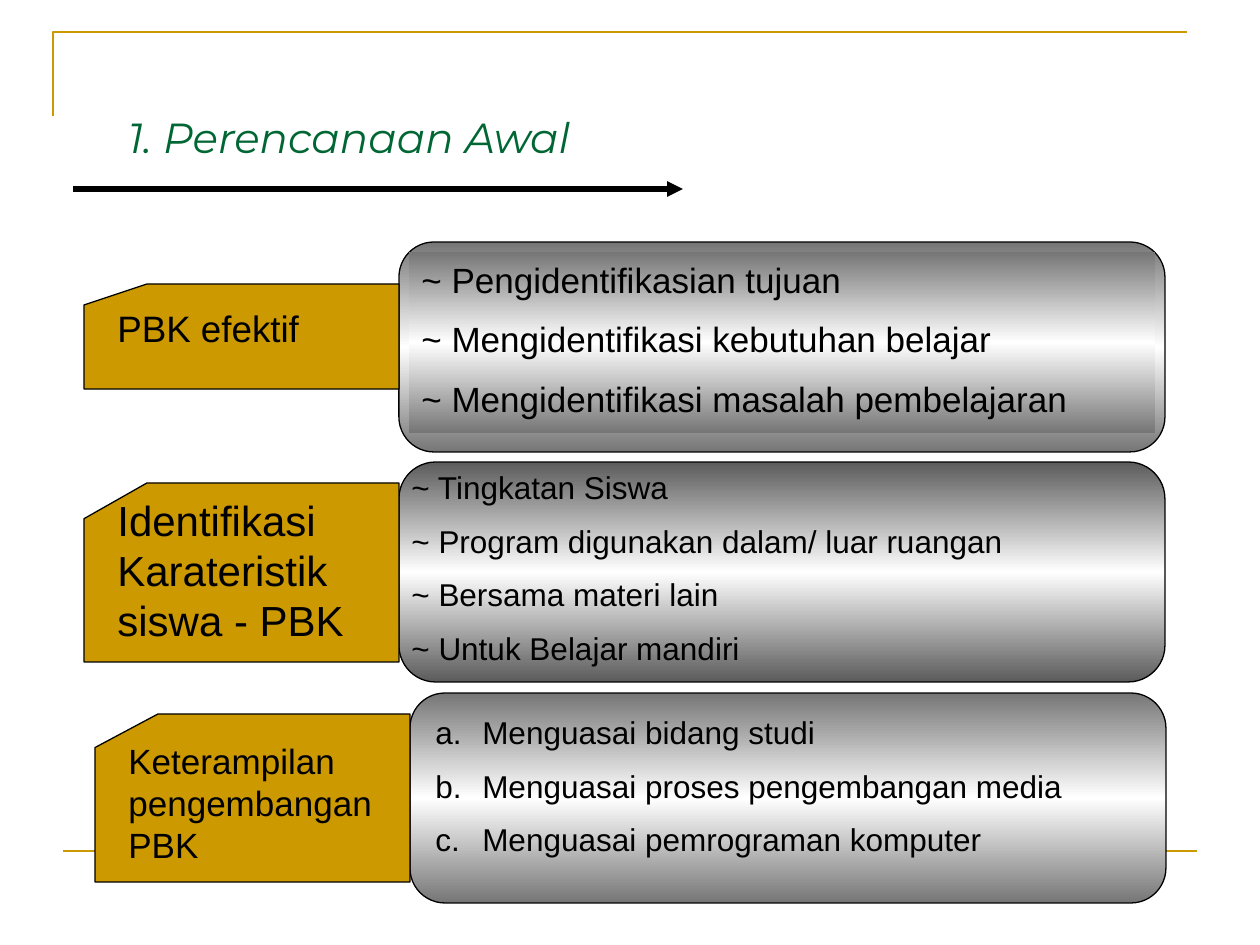
from copy import deepcopy
from dataclasses import dataclass

from lxml import etree
from pptx import Presentation
from pptx import util as u
from pptx.dml.color import RGBColor
from pptx.enum import shapes, text
from pptx.oxml.ns import qn

SCALE = 914400 / 126  # EMU per px


def px(length):
    return u.Emu(round(length * SCALE))


@dataclass(frozen=True)
class Theme:
    gold: str = "CC9900"
    green: str = "006633"
    black: str = "000000"
    white: str = "FFFFFF"
    gray: str = "767676"
    dark_gray: str = "5B5B5B"
    body_font: str = "Arial"
    title_font: str = "Montserrat"
    title: int = 24
    large: int = 24
    medium: int = 20
    small: int = 18
    label: int = 21


THEME = Theme()


def write_text(frame, lines, size, color=THEME.black, font=THEME.body_font,
               italic=False, align=text.PP_ALIGN.LEFT, wrap=True, lettered=False):
    """Fill a text frame with one paragraph per line."""
    frame.word_wrap = wrap
    frame.auto_size = text.MSO_AUTO_SIZE.NONE
    frame.vertical_anchor = text.MSO_ANCHOR.TOP
    for index, line in enumerate(lines):
        paragraph = frame.add_paragraph() if index else frame.paragraphs[0]
        paragraph.alignment = align
        paragraph.space_before = u.Pt(size / 2 if index else 0)
        run = paragraph.add_run()
        run.text = line
        run.font.name = font
        run.font.size = u.Pt(size)
        run.font.italic = italic
        run.font.color.rgb = RGBColor.from_string(color)
        if lettered:
            properties = paragraph._p.get_or_add_pPr()
            indent = px(47)
            properties.set("marL", str(indent))
            properties.set("indent", str(-indent))
            etree.SubElement(properties, qn("a:buAutoNum"), type="alphaLcPeriod")


class SlideBuilder:
    def __init__(self, presentation, theme):
        self.theme = theme
        self.slide = presentation.slides.add_slide(presentation.slide_layouts[5])

    def outline(self, shape, color, width):
        shape.line.color.rgb = RGBColor.from_string(color)
        shape.line.width = u.Pt(width)

    def title(self, box, words):
        placeholder = self.slide.shapes.title
        placeholder.left, placeholder.top, placeholder.width, placeholder.height = map(px, box)
        write_text(placeholder.text_frame, [words], self.theme.title, self.theme.green,
                   self.theme.title_font, italic=True,
                   align=text.PP_ALIGN.CENTER, wrap=False)

    def corner(self, points):
        builder = self.slide.shapes.build_freeform(*points[0], scale=SCALE)
        builder.add_line_segments(points[1:], close=False)
        shape = builder.convert_to_shape()
        shape.shadow.inherit = False
        shape.fill.background()
        self.outline(shape, self.theme.gold, 1.5)

    def line(self, start, end, color, width, arrow=False):
        connector = self.slide.shapes.add_connector(
            shapes.MSO_CONNECTOR.STRAIGHT, *map(px, start + end))
        self.outline(connector, color, width)
        if arrow:
            etree.SubElement(connector.line._get_or_add_ln(), qn("a:tailEnd"), type="triangle")
        etree.SubElement(connector._element.spPr, qn("a:effectLst"))

    def shape(self, kind, box):
        shape = self.slide.shapes.add_shape(kind, *map(px, box))
        shape.shadow.inherit = False
        self.outline(shape, self.theme.black, 0.75)
        return shape

    def panel(self, box, edge, kind=shapes.MSO_SHAPE.FLOWCHART_ALTERNATE_PROCESS):
        """Box shaded from edge colour to white and back, top to bottom."""
        shape = self.shape(kind, box)
        shape.fill.gradient()
        shape.fill.gradient_angle = 270
        stop_list = shape._element.spPr.find(qn("a:gradFill")).find(qn("a:gsLst"))
        stop_list.append(deepcopy(stop_list[0]))
        stops = zip(shape.fill.gradient_stops, (0, 0.5, 1), (edge, self.theme.white, edge))
        for stop, position, color in stops:
            stop.position = position
            stop.color.rgb = RGBColor.from_string(color)
        return shape

    def card(self, box):
        shape = self.shape(shapes.MSO_SHAPE.FLOWCHART_CARD, box)
        shape.fill.solid()
        shape.fill.fore_color.rgb = RGBColor.from_string(self.theme.gold)

    def text_box(self, box, lines, size, **style):
        shape = self.slide.shapes.add_textbox(*map(px, box))
        write_text(shape.text_frame, lines, size, **style)


def main():
    presentation = Presentation()
    presentation.slide_width, presentation.slide_height = px(1260), px(945)
    page = SlideBuilder(presentation, THEME)

    # Frame lines
    page.corner([(53, 116), (53, 32), (1187, 32)])
    page.line((63, 851), (1197, 851), THEME.gold, 1.5)

    # Title and arrow
    page.title((99, 105, 500, 59), "1. Perencanaan Awal")
    page.line((73, 189), (683, 189), THEME.black, 3, arrow=True)

    # Panels and cards
    for panel, edge, card in (
        ((399, 242, 766, 210), THEME.gray, (84, 284, 315, 105)),
        ((399, 462, 766, 220), THEME.dark_gray, (84, 483, 315, 179)),
        ((410, 693, 756, 210), THEME.gray, (95, 714, 315, 168)),
    ):
        page.panel(panel, edge)
        page.card(card)

    # Card labels
    page.text_box((105, 300, 263, 60), ["PBK efektif"], THEME.label)
    page.text_box((105, 488, 305, 164), ["Identifikasi Karateristik siswa - PBK"], THEME.large)
    page.text_box((116, 733, 284, 139), ["Keterampilan pengembangan PBK"], THEME.medium)

    # Panel details
    goals = page.panel((409, 252, 746, 181), THEME.gray, shapes.MSO_SHAPE.RECTANGLE)
    goals.line.fill.background()
    write_text(goals.text_frame, [
        "~ Pengidentifikasian tujuan",
        "~ Mengidentifikasi kebutuhan belajar",
        "~ Mengidentifikasi masalah pembelajaran",
    ], THEME.medium)
    page.text_box((399, 462, 725, 222), [
        "~ Tingkatan Siswa",
        "~ Program digunakan dalam/ luar ruangan",
        "~ Bersama materi lain",
        "~ Untuk Belajar mandiri",
    ], THEME.small)
    page.text_box((423, 707, 753, 164), [
        "Menguasai bidang studi",
        "Menguasai proses pengembangan media",
        "Menguasai pemrograman komputer",
    ], THEME.small, lettered=True)

    presentation.save("out.pptx")


if __name__ == "__main__":
    main()
